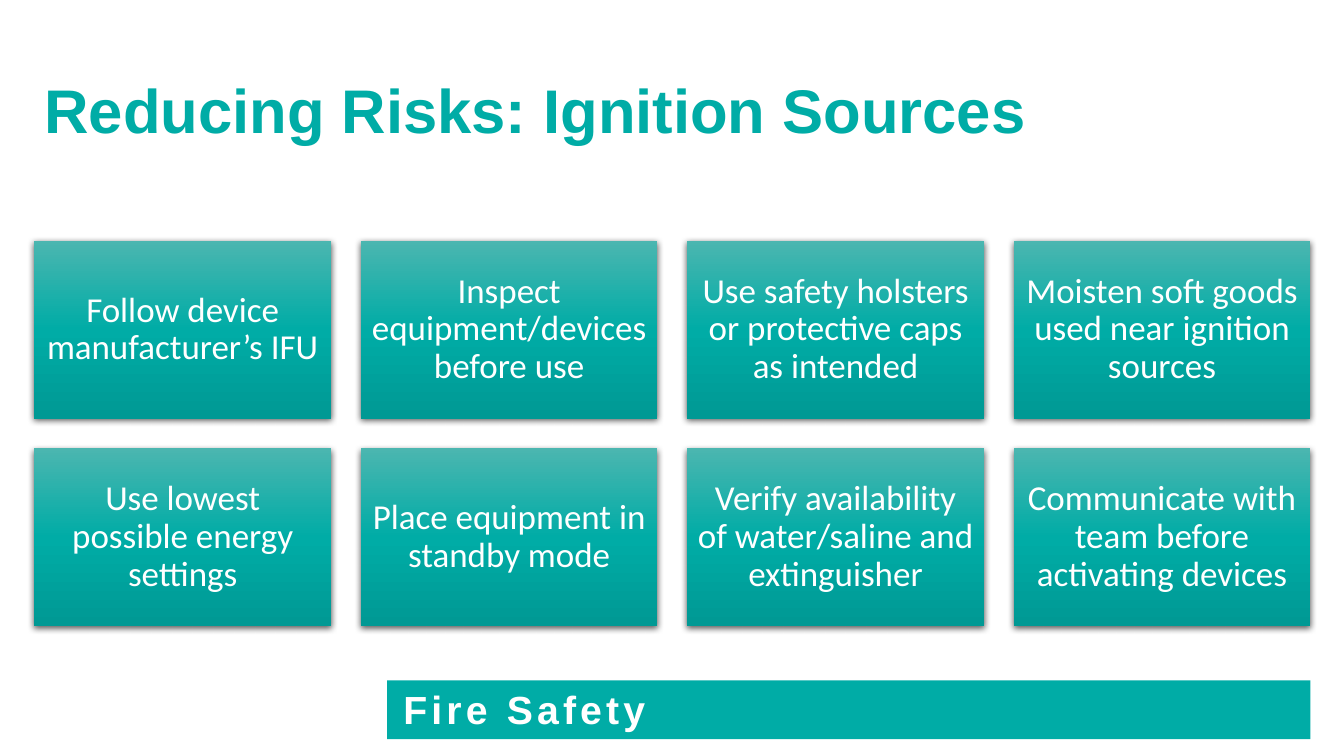
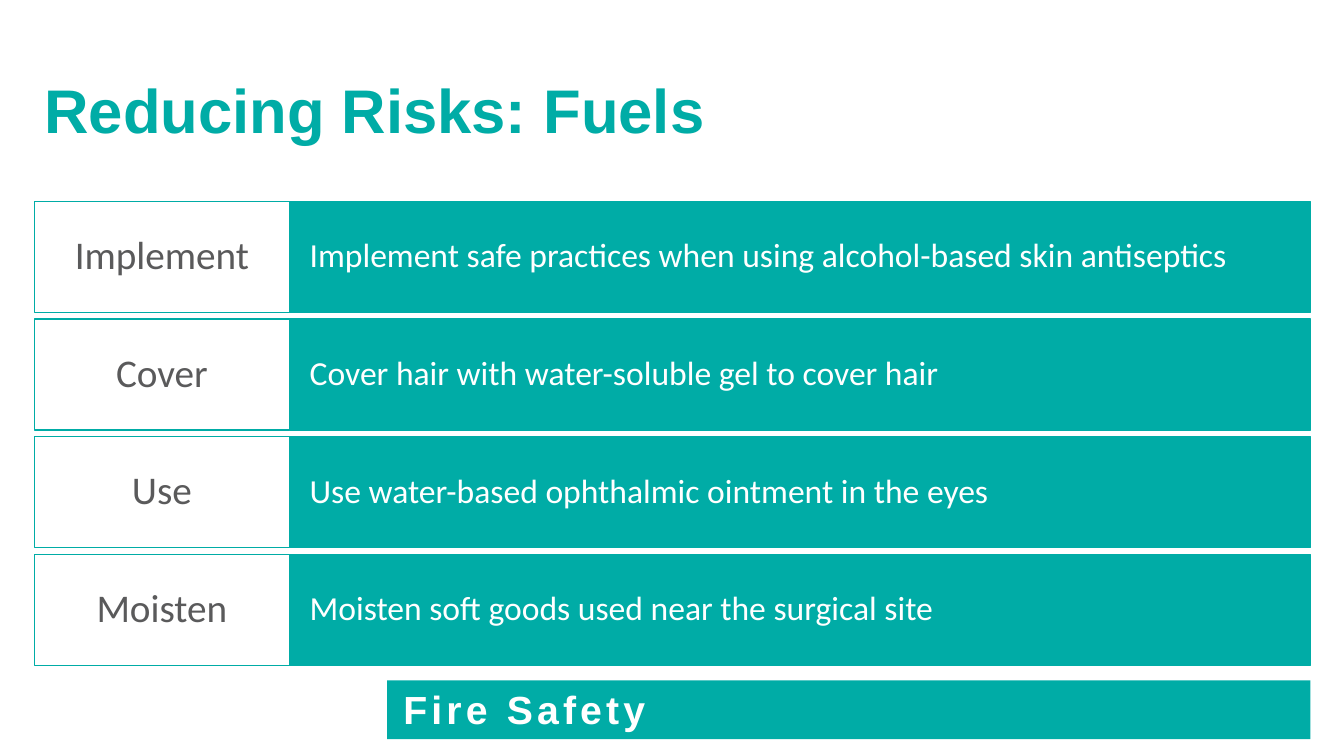
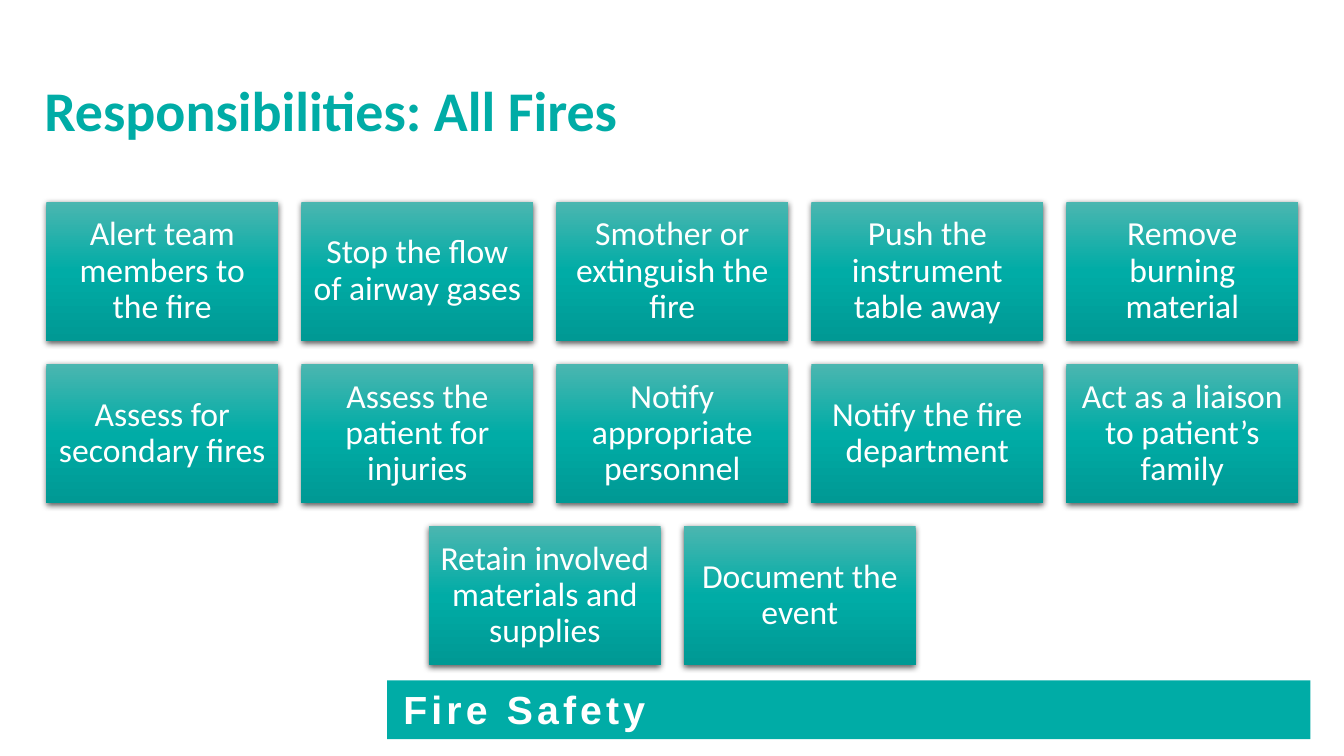
from copy import deepcopy

from lxml import etree
from pptx import Presentation
from pptx import util as u
from pptx.dml.color import RGBColor
from pptx.enum import shapes, text
from pptx.oxml.ns import qn

COLUMNS, ROWS = 160, 90
CELL = u.Inches(7.5) / ROWS
LEFT, WIDTH = 4.08, 151.92
TOP, HEIGHT = 24, 55.2
TEAL, WHITE, GREY = "00ACA6", "FFFFFF", "5A5A5B"
GRADIENT = [(0, "4BB6B0"), (0.5, TEAL), (1, "009994")]
CENTER, START = text.PP_ALIGN.CENTER, text.PP_ALIGN.LEFT


def color(value):
    """Turn a hex string into a colour."""
    return RGBColor.from_string(value)


def cells(count):
    """Turn grid cells into a length."""
    return u.Emu(round(count * CELL))


def assign(target, **values):
    """Set each named attribute on the target."""
    for name, value in values.items():
        setattr(target, name, value)


class Deck:
    """Hold the shared style and the current slide."""

    def __init__(self):
        """Start an empty widescreen presentation."""
        self.presentation = Presentation()
        assign(self.presentation, slide_width=cells(COLUMNS), slide_height=cells(ROWS))
        self.slide = None

    def label(self, shape, words, size, ink, font="Calibri", bold=False,
              align=CENTER, anchor=text.MSO_ANCHOR.MIDDLE, line_spacing=0.9,
              insets=(0.1, 0.1), tracking=None):
        """Put one formatted paragraph into a shape."""
        frame = shape.text_frame
        side, top = map(u.Inches, insets)
        assign(frame, word_wrap=True, auto_size=text.MSO_AUTO_SIZE.NONE,
               vertical_anchor=anchor, margin_left=side, margin_right=side,
               margin_top=top, margin_bottom=top)
        paragraph = frame.paragraphs[0]
        assign(paragraph, alignment=align, line_spacing=line_spacing)
        run = paragraph.add_run()
        run.text = words
        assign(run.font, name=font, size=u.Pt(size), bold=bold)
        run.font.color.rgb = color(ink)
        if tracking:
            run._r.get_or_add_rPr().set("spc", str(tracking * 100))

    def box(self, left, top, width, height, fill=TEAL, outline=None):
        """Draw a flat rectangle placed in grid cells."""
        shape = self.slide.shapes.add_shape(
            shapes.MSO_SHAPE.RECTANGLE, *map(cells, (left, top, width, height)))
        shape.shadow.inherit = False
        shape.fill.solid()
        shape.fill.fore_color.rgb = color(fill)
        if outline:
            shape.line.color.rgb = color(outline)
            shape.line.width = u.Pt(1)
        else:
            shape.line.fill.background()
        return shape

    def add_slide(self, title, size=44, font="Arial"):
        """Start a slide with its title and footer band."""
        self.slide = self.presentation.slides.add_slide(self.presentation.slide_layouts[5])
        heading = self.slide.shapes.title
        assign(heading, left=cells(LEFT), top=cells(4.8),
               width=cells(WIDTH), height=cells(17.4))
        self.label(heading, title, size, TEAL, font, True, START, insets=(0.1, 0.05))
        band = self.box(46.1, 81, 109.9, 7)
        self.label(band, "Fire Safety", 28, WHITE, "Arial", True, START,
                   text.MSO_ANCHOR.TOP, 0.8, (0.16, 0.14), tracking=3)

    def card(self, left, top, width, height, words, size):
        """Draw a gradient card with a soft shadow."""
        shape = self.box(left, top, width, height)
        shape.fill.gradient()
        shape.fill.gradient_angle = 270
        stops = shape._element.spPr.find(qn("a:gradFill")).find(qn("a:gsLst"))
        stops.append(deepcopy(stops[-1]))
        for stop, (position, shade) in zip(shape.fill.gradient_stops, GRADIENT):
            stop.position = position
            stop.color.rgb = color(shade)
        effects = shape._element.spPr.find(qn("a:effectLst"))
        shadow = etree.SubElement(effects, qn("a:outerShdw"), blurRad=str(u.Pt(4.5)),
                                  dist=str(u.Pt(1.5)), dir="5400000",
                                  algn="ctr", rotWithShape="0")
        black = etree.SubElement(shadow, qn("a:srgbClr"), val="000000")
        etree.SubElement(black, qn("a:alpha"), val="63000")
        self.label(shape, words, size, WHITE)

    def cards(self, columns, labels, size):
        """Fit a centred grid of cards into the content area."""
        lines = [labels[i:i + columns] for i in range(0, len(labels), columns)]
        count = len(lines)
        width = min(WIDTH / (columns + 0.1 * (columns - 1)),
                    HEIGHT / (0.6 * count + 0.1 * (count - 1)))
        height, gap = 0.6 * width, 0.1 * width
        top = TOP + (HEIGHT - count * (height + gap) + gap) / 2
        for row, line in enumerate(lines):
            left = LEFT + (WIDTH - len(line) * (width + gap) + gap) / 2
            for column, words in enumerate(line):
                self.card(left + column * (width + gap), top + row * (height + gap),
                          width, height, words, size)

    def actions(self, items):
        """Stack labelled rows over the content area."""
        height = HEIGHT / (len(items) + 0.06 * (len(items) - 1))
        tag_width = 0.2 * WIDTH
        for row, (action, detail) in enumerate(items):
            top = TOP + row * 1.06 * height
            bar = self.box(LEFT + tag_width, top, WIDTH - tag_width, height, outline=TEAL)
            self.label(bar, detail, 24, WHITE, align=START, insets=(0.2, 0.28))
            tag = self.box(LEFT, top, tag_width, height, WHITE, TEAL)
            self.label(tag, action, 28, GREY, insets=(0.13, 0.11))


def main():
    """Build the three slides and save them."""
    deck = Deck()
    deck.add_slide("Reducing Risks: Ignition Sources")
    deck.cards(4, [
        "Follow device manufacturer’s IFU",
        "Inspect equipment/devices before use",
        "Use safety holsters or protective caps as intended",
        "Moisten soft goods used near ignition sources",
        "Use lowest possible energy settings",
        "Place equipment in standby mode",
        "Verify availability of water/saline and extinguisher",
        "Communicate with team before activating devices",
    ], 25)
    deck.add_slide("Reducing Risks: Fuels")
    deck.actions([
        ("Implement", "Implement safe practices when using alcohol-based skin antiseptics"),
        ("Cover", "Cover hair with water-soluble gel to cover hair"),
        ("Use", "Use water-based ophthalmic ointment in the eyes"),
        ("Moisten", "Moisten soft goods used near the surgical site"),
    ])
    deck.add_slide("Responsibilities: All Fires", 40, "Calibri")
    deck.cards(5, [
        "Alert team members to the fire",
        "Stop the flow of airway gases",
        "Smother or extinguish the fire",
        "Push the instrument table away",
        "Remove burning material",
        "Assess for secondary fires",
        "Assess the patient for injuries",
        "Notify appropriate personnel",
        "Notify the fire department",
        "Act as a liaison to patient’s family",
        "Retain involved materials and supplies",
        "Document the event",
    ], 24)
    deck.presentation.save("out.pptx")


if __name__ == "__main__":
    main()
